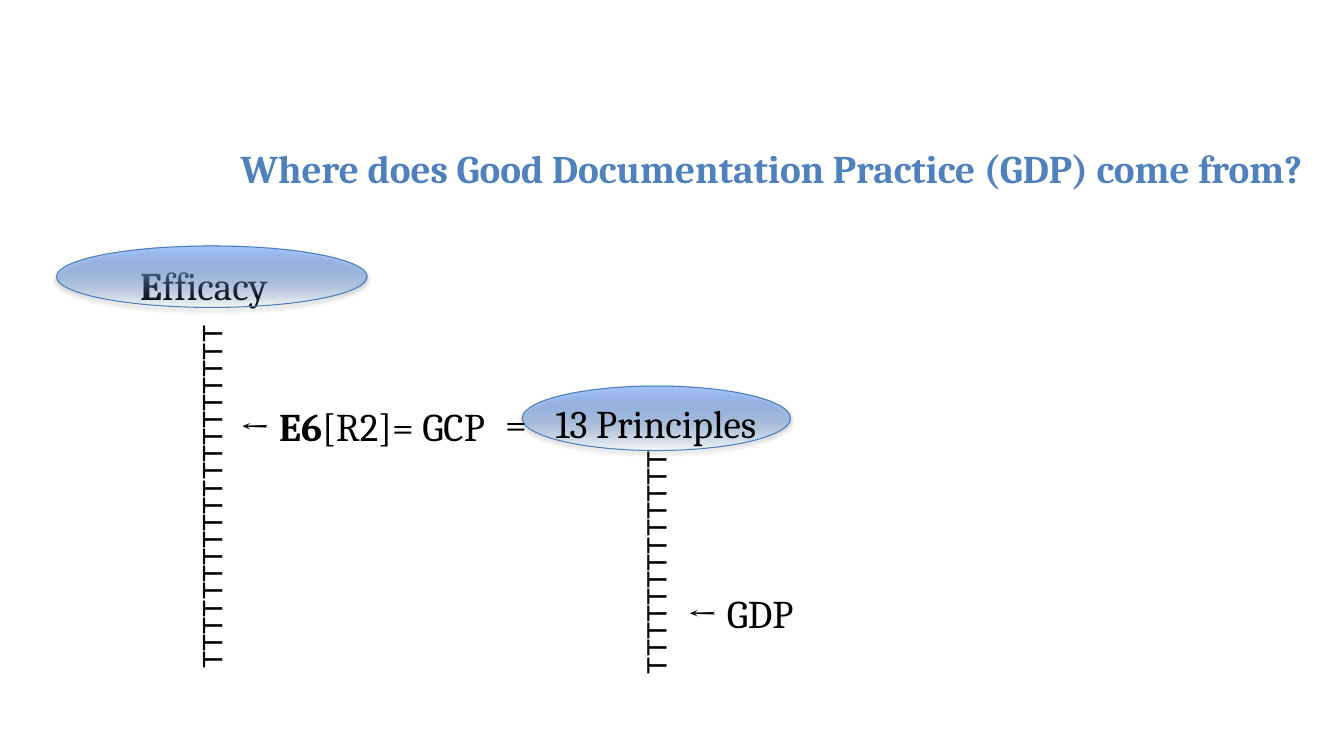
from dataclasses import dataclass

from lxml.etree import SubElement
from pptx import Presentation
from pptx.dml.color import RGBColor
from pptx.enum.shapes import MSO_SHAPE
from pptx.enum.text import MSO_ANCHOR, MSO_AUTO_SIZE, PP_ALIGN
from pptx.oxml.ns import qn
from pptx.util import Inches, Pt

OVAL = MSO_SHAPE.OVAL
TOP, MIDDLE = MSO_ANCHOR.TOP, MSO_ANCHOR.MIDDLE
LEFT, CENTER = PP_ALIGN.LEFT, PP_ALIGN.CENTER
FIXED = MSO_AUTO_SIZE.NONE

BLACK = RGBColor(0x00, 0x00, 0x00)
BLUE = RGBColor(0x4F, 0x81, 0xBD)
EDGE = RGBColor(0x4B, 0x7E, 0xBC)
DEEP = RGBColor(0x3F, 0x80, 0xCE)
PALE = RGBColor(0xA4, 0xC4, 0xFF)

SERIF = {"name": "Cambria", "size": Pt(28), "bold": False}
SANS = {"name": "Arial", "size": Pt(20), "bold": False}
BOLD = SERIF | {"bold": True}
INDENT = 0.04


@dataclass
class Box:
    left: float
    top: float
    width: float
    height: float

    def lengths(self) -> list:
        return [Inches(v) for v in (self.left, self.top, self.width, self.height)]


@dataclass
class Label:
    box: Box
    text: str
    font: dict
    turn: int = 0
    space: float = 1.0
    indent: float = 0
    tab: float = 0


def place(shape, box: Box) -> None:
    shape.left, shape.top, shape.width, shape.height = box.lengths()


def set_frame(frame, anchor) -> None:
    values = {"word_wrap": True, "auto_size": FIXED, "vertical_anchor": anchor}
    for key, value in values.items():
        setattr(frame, key, value)


def add_run(para, text: str, font: dict, color: RGBColor = BLACK) -> None:
    run = para.add_run()
    run.text = text
    for key, value in font.items():
        setattr(run.font, key, value)
    run.font.color.rgb = color


def set_para(para, indent: float, space: float, before: float = 0, tab: float = 0) -> None:
    values = {"alignment": LEFT, "line_spacing": space, "space_before": Pt(before)}
    for key, value in values.items():
        setattr(para, key, value)
    props = para._p.get_or_add_pPr()
    props.set("marL", str(Inches(indent)))
    props.set("indent", "0")
    SubElement(props, qn("a:buNone"))
    if tab:
        tabs = SubElement(props, qn("a:tabLst"))
        SubElement(tabs, qn("a:tab"), pos=str(Inches(tab)), algn="l")


def add_oval(slide, box: Box) -> None:
    oval = slide.shapes.add_shape(OVAL, *box.lengths())
    oval.line.color.rgb = EDGE
    oval.line.width = Pt(0.75)
    # Gradient from clear at the bottom to pale blue at the top
    oval.fill.gradient()
    oval.fill.gradient_angle = 90
    for stop, color, spot in zip(oval.fill.gradient_stops, (DEEP, PALE), (0, 1)):
        stop.color.rgb = color
        stop.position = spot
    props = oval.element.find(qn("p:spPr"))
    first = props.find(".//" + qn("a:gs")).find(qn("a:srgbClr"))
    SubElement(first, qn("a:alpha"), val="0")
    # Soft shadow below
    oval.shadow.inherit = False
    shade = SubElement(props.find(qn("a:effectLst")), qn("a:outerShdw"),
                       blurRad=str(Pt(3.1)), dist=str(Pt(1.8)),
                       dir="5400000", rotWithShape="0")
    tint = SubElement(shade, qn("a:srgbClr"), val=str(BLACK))
    SubElement(tint, qn("a:alpha"), val="35000")


def add_label(slide, label: Label) -> None:
    shape = slide.shapes.add_textbox(*label.box.lengths())
    shape.rotation = label.turn
    set_frame(shape.text_frame, TOP)
    para = shape.text_frame.paragraphs[0]
    set_para(para, label.indent, label.space, tab=label.tab)
    add_run(para, label.text, label.font)


def add_title(slide) -> None:
    title = slide.shapes.title
    place(title, Box(1.65, 1.04, 12, 1.25))
    set_frame(title.text_frame, MIDDLE)
    para = title.text_frame.paragraphs[0]
    para.alignment = CENTER
    add_run(para, "Where does Good Documentation Practice (GDP) come from?", BOLD, BLUE)


def add_body(slide) -> None:
    body = slide.placeholders[1]
    place(body, Box(1.25, 2.31, 11.46, 4.22))
    frame = body.text_frame
    set_frame(frame, TOP)
    head = frame.paragraphs[0]
    set_para(head, INDENT, 1.5)
    add_run(head, "E", BOLD)
    add_run(head, "fficacy", SERIF)
    guide = frame.add_paragraph()
    set_para(guide, 1.03, 1.5, before=50)
    for text, font in (("← ", SERIF), ("E6", BOLD), ("[R2]= GCP", SERIF)):
        add_run(guide, text, font)


def main() -> None:
    deck = Presentation()
    deck.slide_width, deck.slide_height = Inches(13.33), Inches(7.5)
    slide = deck.slides.add_slide(deck.slide_layouts[1])

    add_title(slide)
    add_body(slide)

    # Ovals and the ladders hanging from them
    add_oval(slide, Box(0.56, 2.44, 3.08, 0.61))
    add_label(slide, Label(Box(-0.05, 4.36, 4.3, 0.44), "T" * 20, SANS, turn=270))
    add_label(slide, Label(Box(5.2, 5.26, 2.61, 0.44), "T" * 13, SANS, turn=270))
    add_oval(slide, Box(5.18, 3.83, 2.66, 0.64))

    # Labels beside the second ladder
    add_label(slide, Label(Box(6.72, 5.8, 2.55, 0.57), "← GDP", SERIF))
    add_label(slide, Label(Box(4.87, 3.68, 3.72, 0.81), "=\t13 Principles", SERIF,
                           space=1.5, indent=INDENT, tab=0.39))

    deck.save("out.pptx")


if __name__ == "__main__":
    main()
